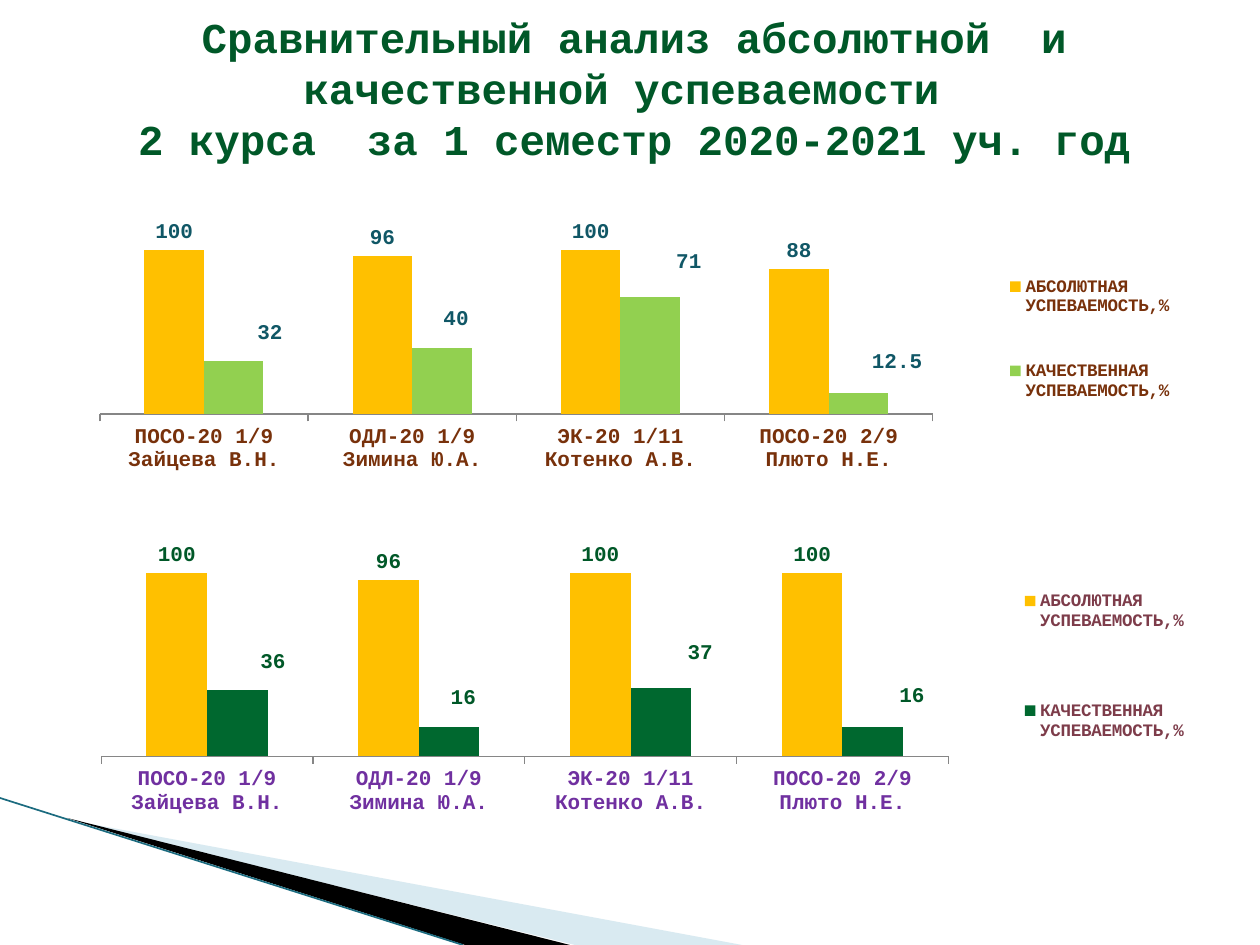
"""Build a slide comparing overall and quality pass rates in two column charts."""
from lxml.etree import SubElement
from pptx import Presentation
from pptx.chart.data import CategoryChartData
from pptx.dml.color import RGBColor
from pptx.enum.chart import XL_CHART_TYPE, XL_LABEL_POSITION, XL_LEGEND_POSITION, XL_TICK_MARK
from pptx.enum.text import MSO_ANCHOR, PP_ALIGN
from pptx.oxml import parse_xml
from pptx.oxml.ns import nsdecls, qn
from pptx.util import Emu, Pt

SCALE = 914400 / 126
FACE = "Courier New"
GROUPS = [
    "ПОСО-20 1/9\nЗайцева В.Н.",
    "ОДЛ-20 1/9\nЗимина Ю.А.",
    "ЭК-20 1/11\nКотенко А.В.",
    "ПОСО-20 2/9\nПлюто Н.Е.",
]
NAMES = ["АБСОЛЮТНАЯ УСПЕВАЕМОСТЬ,%", "КАЧЕСТВЕННАЯ УСПЕВАЕМОСТЬ,%"]
SHIFTS = [(36, -10), (14, -11), (39, -17), (39, -13)]
GOLD = "FFC000"


def px(n):
    return Emu(round(n * SCALE))


def color(code):
    return RGBColor.from_string(code)


def style(font, size, code, bold=True):
    font.name, font.size, font.bold = FACE, Pt(size), bold
    font.color.rgb = color(code)


def layout(x, y, w=None, h=None, inner=False):
    parts = []
    if inner:
        parts.append('<c:layoutTarget val="inner"/>')
    if w:
        parts.append('<c:xMode val="edge"/><c:yMode val="edge"/>')
    for key, val in zip("xywh", (x, y, w, h)):
        if val is not None:
            parts.append(f'<c:{key} val="{val:.3f}"/>')
    return parse_xml(f'<c:layout {nsdecls("c")}><c:manualLayout>{"".join(parts)}'
                     '</c:manualLayout></c:layout>')


def place(parent, item, after=None):
    for old in parent.findall(qn("c:layout")):
        parent.remove(old)
    if after is None:
        parent.insert(0, item)
    else:
        parent.find(qn(after)).addnext(item)


class Deck:
    def __init__(self):
        self.prs = Presentation()
        self.prs.slide_width, self.prs.slide_height = px(1260), px(945)
        self.slide = self.prs.slides.add_slide(self.prs.slide_layouts[6])
        self.shapes = self.slide.shapes

    def wedge(self, points, fill, alpha=100):
        pen = self.shapes.build_freeform(*points[0], scale=SCALE)
        pen.add_line_segments(points[1:], close=True)
        shape = pen.convert_to_shape()
        shape.shadow.inherit = False
        shape.line.fill.background()
        shape.fill.solid()
        shape.fill.fore_color.rgb = color(fill)
        if alpha < 100:
            tint = shape.fill._xPr.find(".//" + qn("a:srgbClr"))
            SubElement(tint, qn("a:alpha"), val=str(alpha * 1000))

    def line(self, start, end, code, width):
        link = self.shapes.add_connector(1, *map(px, start + end))
        link.line.color.rgb = color(code)
        link.line.width = Pt(width)
        SubElement(link._element.spPr, qn("a:effectLst"))

    def text(self, words, box, size=18, code="000000", pitch=None):
        frame = self.shapes.add_textbox(*map(px, box)).text_frame
        frame.word_wrap = True
        frame.vertical_anchor = MSO_ANCHOR.MIDDLE
        para = frame.paragraphs[0]
        para.text = words
        para.alignment = PP_ALIGN.CENTER
        if pitch:
            para.line_spacing = Pt(pitch)
        for run in para.runs:
            style(run.font, size, code)

    def chart(self, box, rows, fills, tones, plot, legend):
        data = CategoryChartData()
        data.categories = GROUPS
        for name, row in zip(NAMES, rows):
            data.add_series(name, row)
        chart = self.shapes.add_chart(
            XL_CHART_TYPE.COLUMN_CLUSTERED, *map(px, box), data).chart
        label, axis, key = tones
        style(chart.font, 10, "000000", False)
        chart.has_title = False
        chart.has_legend = True
        chart.legend.position = XL_LEGEND_POSITION.RIGHT
        chart.legend.include_in_layout = False
        style(chart.legend.font, 10, key)
        place(chart.legend._element, layout(*legend), "c:legendPos")
        place(chart._chartSpace.chart.plotArea, layout(*plot, inner=True))

        cats, vals = chart.category_axis, chart.value_axis
        cats.major_tick_mark = XL_TICK_MARK.OUTSIDE
        cats.format.line.color.rgb = color("868686")
        style(cats.tick_labels.font, 12, axis)
        vals.has_major_gridlines = False
        vals.minimum_scale, vals.maximum_scale = 0, 120
        vals.visible = False

        bars = chart.plots[0]
        bars.gap_width, bars.overlap = 150, 0
        bars.vary_by_categories = False
        for series, fill in zip(bars.series, fills):
            series.format.fill.solid()
            series.format.fill.fore_color.rgb = color(fill)
            tags = series.data_labels
            tags.show_value = True
            tags.position = XL_LABEL_POSITION.OUTSIDE_END
            style(tags.font, 12, label)
            for lead in series._element.iter(qn("c:showLeaderLines")):
                lead.set("val", "0")
        last = bars.series[1]
        for i in range(len(SHIFTS)):
            tag = last.points[i].data_label
            style(tag.font, 12, label)
            tag.position = XL_LABEL_POSITION.OUTSIDE_END
        for item, (dx, dy) in zip(last._element.iter(qn("c:dLbl")), SHIFTS):
            place(item, layout(dx / box[2], dy / box[3]), "c:idx")


def main():
    deck = Deck()
    deck.wedge([(69, 820), (742, 945), (575, 945)], "A0CBDC", 40)
    deck.wedge([(67, 818), (570, 945), (465, 945)], "000000")
    deck.line((0, 798), (463, 945), "1B6B7F", 0.95)
    deck.text("Сравнительный анализ абсолютной  и качественной успеваемости \v"
              "2 курса  за 1 семестр 2020-2021 уч. год",
              (74, 0, 1121, 175), size=24.3, code="005828", pitch=29)
    deck.chart((25, 204, 1170, 289), [(100, 96, 100, 88), (32, 40, 71, 12.5)],
               (GOLD, "92D050"), ("105766", "78310B", "78310B"),
               (0.064, 0.044, 0.712, 0.683), (0.835, 0.1, 0.15, 0.74))
    deck.chart((25, 522, 1190, 315), [(100, 96, 100, 100), (36, 16, 37, 16)],
               (GOLD, "00682F"), ("005828", "7030A0", "7D3C4A"),
               (0.064, 0.044, 0.712, 0.7), (0.832, 0, 0.15, 0.92))
    deck.prs.save("out.pptx")


if __name__ == "__main__":
    main()
